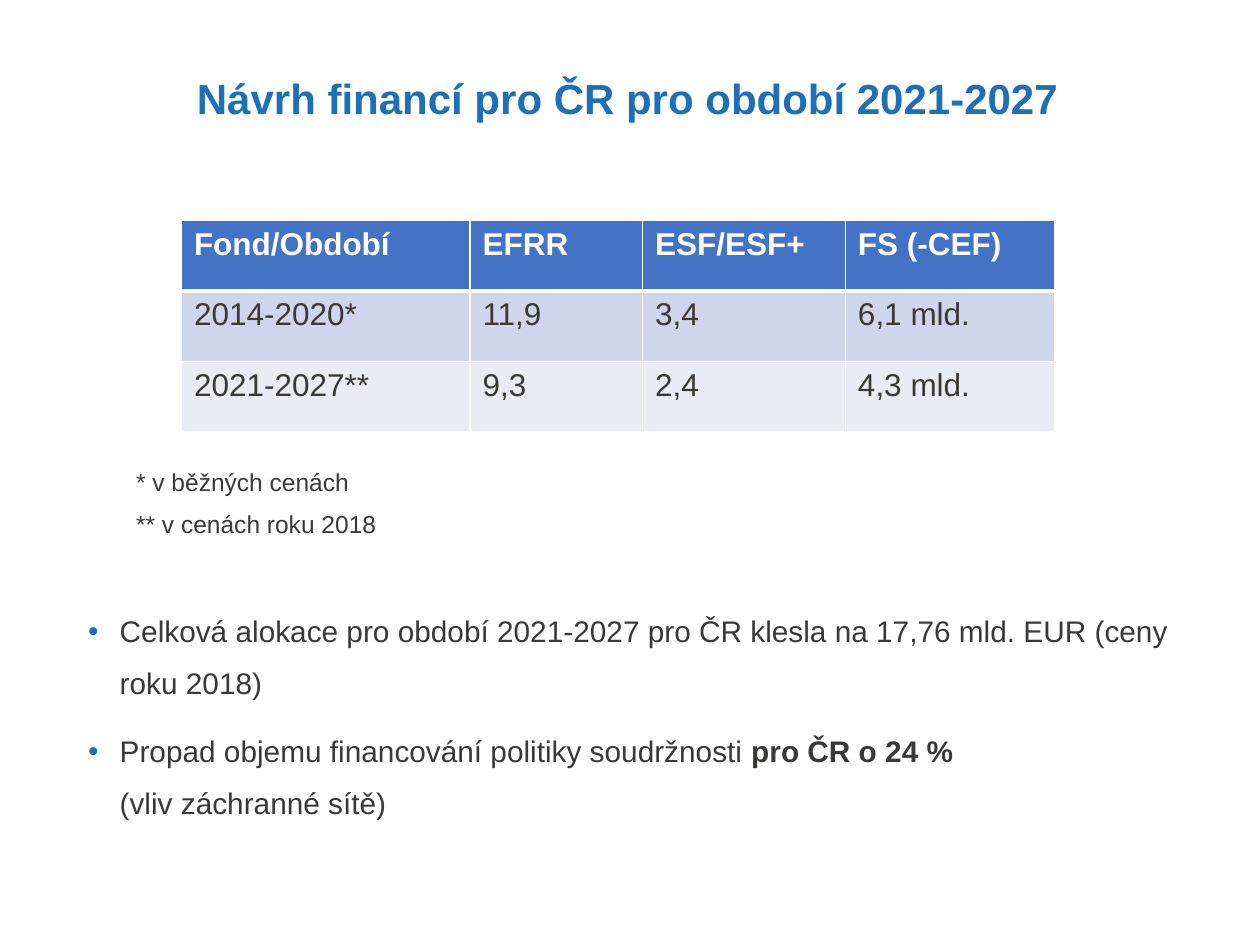
import pptx
import pptx.dml.color
import pptx.enum.text
import pptx.oxml
import pptx.oxml.ns
import pptx.util
from pptx.dml.color import RGBColor
from pptx.util import Inches, Pt

# Content
TITLE = "Návrh financí pro ČR pro období 2021-2027"
TABLE = [
    ["Fond/Období", "EFRR", "ESF/ESF+", "FS (-CEF)"],
    ["2014-2020*", "11,9", "3,4", "6,1 mld."],
    ["2021-2027**", "9,3", "2,4", "4,3 mld."],
]
NOTES = ["* v běžných cenách", "** v cenách roku 2018"]
# Each bullet is a list of (text, bold) spans; \v breaks the line
BULLETS = [
    [("Celková alokace pro období 2021-2027 pro ČR klesla na 17,76 mld. EUR "
      "(ceny roku 2018)", False)],
    [("Propad objemu financování politiky soudržnosti ", False),
     ("pro ČR o 24 %", True), ("\v", False), ("(vliv záchranné sítě)", False)],
]

# Style
FONT = "Arial"
BLUE = RGBColor(0x1D, 0x70, 0xB8)
DARK = RGBColor(0x3B, 0x38, 0x38)
WHITE = RGBColor(0xFF, 0xFF, 0xFF)
ROW_FILLS = [RGBColor(0x44, 0x72, 0xC4), RGBColor(0xCF, 0xD5, 0xEA),
             RGBColor(0xE9, 0xEB, 0xF5)]
COLUMN_WIDTHS = [2.29, 1.37, 1.61, 1.66]
ROW_HEIGHT = 0.56
NAMESPACE = pptx.oxml.ns.nsdecls("a")


def style(font, size, color, bold=False):
    font.name, font.size, font.bold = FONT, Pt(size), bold
    font.color.rgb = color


def place(shape, left, top, width, height):
    shape.left, shape.top = Inches(left), Inches(top)
    shape.width, shape.height = Inches(width), Inches(height)


def set_list_format(para, margin, indent, bullet=None):
    properties = para._p.get_or_add_pPr()
    properties.set("marL", str(Inches(margin)))
    properties.set("indent", str(Inches(indent)))
    if bullet:
        parts = [f'<a:buClr {NAMESPACE}><a:srgbClr val="{BLUE}"/></a:buClr>',
                 f'<a:buFont {NAMESPACE} typeface="{FONT}"/>',
                 f'<a:buChar {NAMESPACE} char="{bullet}"/>']
    else:
        parts = [f'<a:buNone {NAMESPACE}/>']
    for part in parts:
        properties.append(pptx.oxml.parse_xml(part))


def set_borders(cell, bottom_width):
    properties = cell._tc.get_or_add_tcPr()
    widths = {"lnL": 1, "lnR": 1, "lnT": 1, "lnB": bottom_width}
    for position, (side, width) in enumerate(widths.items()):
        properties.insert(position, pptx.oxml.parse_xml(
            f'<a:{side} {NAMESPACE} w="{Pt(width)}"><a:solidFill>'
            f'<a:srgbClr val="{WHITE}"/></a:solidFill></a:{side}>'))


deck = pptx.Presentation()
deck.slide_width, deck.slide_height = Inches(10), Inches(7.5)
page = deck.slides.add_slide(deck.slide_layouts[1])

# Title, set slightly right of the centre of its box
title = page.shapes.title
place(title, 0.47, 0.43, 8.79, 0.74)
frame = title.text_frame
frame.text = TITLE
frame.margin_left = Inches(0.33)
frame.vertical_anchor = pptx.enum.text.MSO_ANCHOR.MIDDLE
para = frame.paragraphs[0]
para.alignment = pptx.enum.text.PP_ALIGN.CENTER
para.line_spacing = 0.9
style(para.runs[0].font, 24, BLUE, True)

# Body: the top inset keeps the text clear of the table
body = page.placeholders[1]
place(body, 0.6, 1.75, 8.86, 4.98)
frame = body.text_frame
frame.margin_top = Inches(1.98)
frame.auto_size = pptx.enum.text.MSO_AUTO_SIZE.NONE
frame.text = "\n".join(NOTES)
for index, para in enumerate(frame.paragraphs):
    para.line_spacing = 0.9
    para.space_before = Pt(9 if index else 0)
    set_list_format(para, 0.38, 0)
    style(para.runs[0].font, 14, DARK)

for index, spans in enumerate(BULLETS):
    para = frame.add_paragraph()
    para.line_spacing = 1.46
    para.space_before = Pt(9 if index else 33)
    set_list_format(para, 0.25, -0.25, "•")
    for text, bold in spans:
        if text == "\v":
            para.add_line_break()
            continue
        span = para.add_run()
        span.text = text
        style(span.font, 17, DARK, bold)

# Table
table = page.shapes.add_table(
    len(TABLE), len(COLUMN_WIDTHS), Inches(1.44), Inches(1.75),
    Inches(sum(COLUMN_WIDTHS)), Inches(ROW_HEIGHT * len(TABLE))).table
for column, width in zip(table.columns, COLUMN_WIDTHS):
    column.width = Inches(width)
for row_index, (values, fill) in enumerate(zip(TABLE, ROW_FILLS)):
    header = row_index == 0
    table.rows[row_index].height = Inches(ROW_HEIGHT)
    for column_index, value in enumerate(values):
        cell = table.cell(row_index, column_index)
        cell.text = value
        cell.fill.solid()
        cell.fill.fore_color.rgb = fill
        set_borders(cell, 3 if header else 1)
        style(cell.text_frame.paragraphs[0].runs[0].font, 18,
              WHITE if header else DARK, header)

deck.save("out.pptx")
